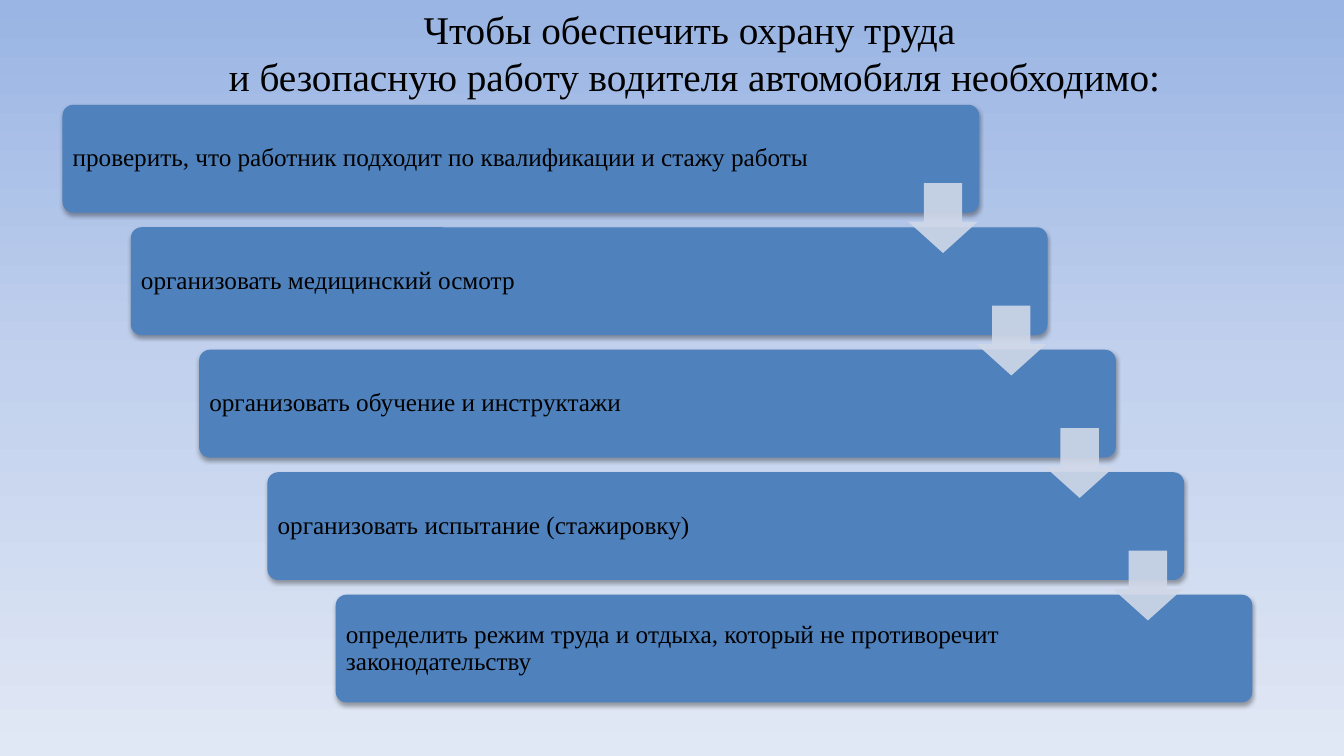
from lxml import etree
from copy import deepcopy
from pptx import Presentation
from pptx import util as u
from pptx.dml.color import RGBColor
from pptx.enum import shapes, text
from pptx.oxml import parse_xml
from pptx.oxml.ns import nsdecls, qn

BLACK = RGBColor(0x00, 0x00, 0x00)
BLUE = RGBColor(0x4F, 0x81, 0xBD)
PALE = RGBColor(0xD0, 0xD8, 0xE8)
SKY = [
    (0, RGBColor(0x9A, 0xB5, 0xE4)),
    (0.5, RGBColor(0xC2, 0xD1, 0xED)),
    (1, RGBColor(0xE1, 0xE8, 0xF5)),
]
HEAD = ["Чтобы обеспечить охрану труда ",
        "и безопасную работу водителя автомобиля необходимо:"]
STEPS = [
    "проверить, что работник подходит по квалификации и стажу работы",
    "организовать медицинский осмотр",
    "организовать обучение и инструктажи",
    "организовать испытание (стажировку)",
    "определить режим труда и отдыха, который не противоречит законодательству",
]
LEFT, TOP = 0.62, 1.04
COL = (3.33 - LEFT) / 4
ROW = (5.9 - TOP) / 4


def write(frame, lines, size, align, gap=0, pitch=1.0):
    frame.word_wrap = True
    frame.vertical_anchor = text.MSO_ANCHOR.MIDDLE
    for i, line in enumerate(lines):
        par = frame.add_paragraph() if i else frame.paragraphs[0]
        par.alignment = align
        par.line_spacing = pitch
        par.space_after = u.Pt(gap)
        run = par.add_run()
        run.text = line
        font = run.font
        font.name, font.size = "Times New Roman", u.Pt(size)
        font.color.rgb = BLACK


class Deck:
    def __init__(self):
        self.prs = Presentation()
        self.prs.slide_width = u.Inches(13.33)
        self.prs.slide_height = u.Inches(7.5)
        self.slide = self.prs.slides.add_slide(self.prs.slide_layouts[5])

    def grid(self, col, row, wide, high):
        return [u.Inches(n) for n in
                (LEFT + col * COL, TOP + row * ROW, wide * COL, high * ROW)]

    def sky(self):
        fill = self.slide.background.fill
        fill.gradient()
        fill.gradient_angle = 270
        stops = self.slide.element.find(".//" + qn("a:gsLst"))
        stops.append(deepcopy(stops[0]))
        for stop, (pos, tint) in zip(fill.gradient_stops, SKY):
            stop.position = pos
            stop.color.rgb = tint

    def title(self, lines, *cell):
        box = self.slide.shapes.title
        box.left, box.top, box.width, box.height = self.grid(*cell)
        write(box.text_frame, lines, 28, text.PP_ALIGN.CENTER)

    def shape(self, kind, tint, adjust, *cell):
        item = self.slide.shapes.add_shape(kind, *self.grid(*cell))
        for i, part in enumerate(adjust):
            item.adjustments[i] = part
        item.fill.solid()
        item.fill.fore_color.rgb = tint
        item.line.fill.background()
        item.shadow.inherit = False
        return item

    def card(self, line, inset, *cell):
        item = self.shape(shapes.MSO_SHAPE.ROUNDED_RECTANGLE, BLUE, [0.1], *cell)
        item.element.spPr.find(qn("a:effectLst")).append(parse_xml(
            f'<a:outerShdw {nsdecls("a")} blurRad="{u.Pt(3.1)}" '
            f'dist="{u.Pt(1.8)}" dir="5400000" rotWithShape="0">'
            '<a:srgbClr val="000000"><a:alpha val="35000"/></a:srgbClr>'
            '</a:outerShdw>'))
        frame = item.text_frame
        frame.margin_left = frame.margin_top = frame.margin_bottom = u.Inches(0.07)
        frame.margin_right = u.Inches(inset)
        write(frame, [line], 18, text.PP_ALIGN.LEFT, gap=6.3, pitch=0.9)

    def arrow(self, *cell):
        item = self.shape(shapes.MSO_SHAPE.DOWN_ARROW, PALE, [0.55, 0.45], *cell)
        tint = item.element.spPr.find(qn("a:solidFill"))[0]
        etree.SubElement(tint, qn("a:alpha")).set("val", "90000")


def main():
    deck = Deck()
    deck.sky()
    deck.title(HEAD, 1.56, -0.86, 15.38, 0.86)
    for i, step in enumerate(STEPS):
        deck.card(step, 1.45 if i else 1.29, i, i, 13.42, 0.88)
    for i in range(len(STEPS) - 1):
        deck.arrow(i + 12.38, i + 0.64, 1.02, 0.57)
    deck.prs.save("out.pptx")


if __name__ == "__main__":
    main()
